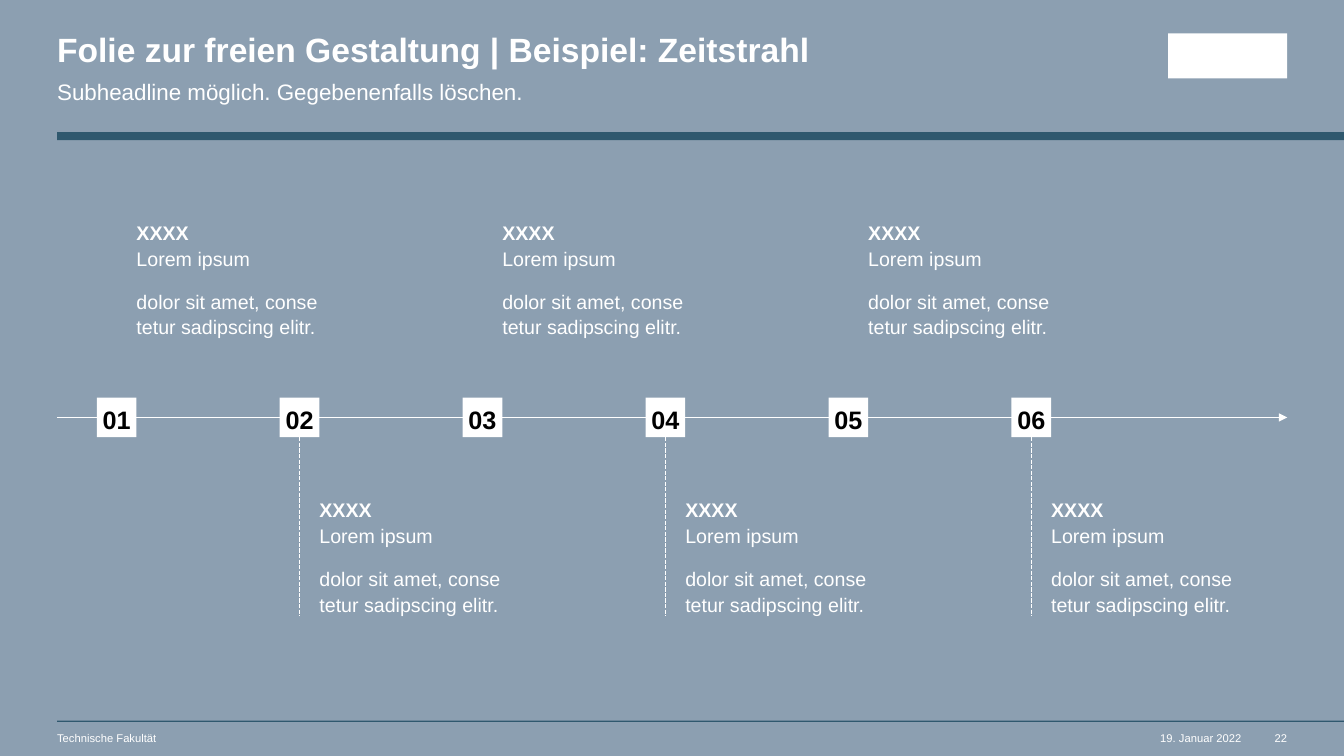
from dataclasses import dataclass

from lxml import etree
from pptx import Presentation
from pptx import util as u
from pptx.dml.color import RGBColor
from pptx.enum import dml, shapes, text
from pptx.oxml import ns

WHITE = RGBColor(0xFF, 0xFF, 0xFF)
BLACK = RGBColor(0x00, 0x00, 0x00)
PETROL = RGBColor(0x2F, 0x58, 0x6E)
GREY_BLUE = RGBColor(0x8C, 0x9F, 0xB1)
FONT = "Arial"

# Lengths in centimetres
PAGE_WIDTH, PAGE_HEIGHT = 33.87, 19.05
LEFT, RIGHT = 1.44, 32.44
AXIS_Y = 10.52
MARKER_SIZE = 1.0
FIRST_MARKER, MARKER_STEP = 2.44, 4.61
UPPER_TEXT, LOWER_TEXT = 5.51, 12.5
GUIDE_END = 15.52


@dataclass(frozen=True)
class Area:
    left: float
    top: float
    width: float
    height: float

    def lengths(self) -> list:
        return [u.Cm(side) for side in (self.left, self.top, self.width, self.height)]


@dataclass(frozen=True)
class Style:
    size: int
    color: RGBColor = WHITE
    bold: bool = False
    align: text.PP_ALIGN = text.PP_ALIGN.LEFT
    spacing: float = 1.0
    after: int = 0


@dataclass(frozen=True)
class Label:
    wording: str
    area: Area
    style: Style


@dataclass(frozen=True)
class Milestone:
    number: str
    left: float
    above: bool


TITLE = Label("Folie zur freien Gestaltung | Beispiel: Zeitstrahl",
              Area(LEFT, 0.84, 19.1, 0.91), Style(24, bold=True, spacing=0.9))
SUBHEADLINE = Label("Subheadline möglich. Gegebenenfalls löschen.",
                    Area(LEFT, 1.91, 19.03, 0.69), Style(16, spacing=1.1, after=12))
FOOTER = [
    Label("Technische Fakultät", Area(LEFT, 18.44, 15.19, 0.33), Style(8)),
    Label("19. Januar 2022", Area(28.93, 18.44, 2.36, 0.33),
          Style(8, align=text.PP_ALIGN.RIGHT)),
    Label("22", Area(31.9, 18.44, 0.54, 0.33), Style(8, align=text.PP_ALIGN.RIGHT)),
]
ENTRY = "XXXX\vLorem ipsum\ndolor sit amet, conse\vtetur sadipscing elitr."
ENTRY_STYLE = Style(14, spacing=1.1, after=12)
MARKER_STYLE = Style(18, BLACK, True, text.PP_ALIGN.CENTER, 1.1, 12)
MILESTONES = [
    Milestone(f"{index + 1:02}", FIRST_MARKER + index * MARKER_STEP, index % 2 == 0)
    for index in range(6)
]


def write(frame, wording: str, style: Style, anchor=text.MSO_ANCHOR.TOP) -> None:
    frame.text = wording
    frame.word_wrap = True
    frame.auto_size = text.MSO_AUTO_SIZE.NONE
    frame.vertical_anchor = anchor
    frame.margin_left = frame.margin_right = frame.margin_top = frame.margin_bottom = 0
    for para in frame.paragraphs:
        para.alignment = style.align
        para.line_spacing = style.spacing
        para.space_before, para.space_after = u.Pt(0), u.Pt(style.after)
        for span in para.runs:
            span.font.name, span.font.size = FONT, u.Pt(style.size)
            span.font.bold, span.font.color.rgb = style.bold, style.color


def fill_placeholder(holder, label: Label) -> None:
    holder.left, holder.top, holder.width, holder.height = label.area.lengths()
    write(holder.text_frame, label.wording, label.style)


def add_label(page, label: Label):
    box = page.shapes.add_textbox(*label.area.lengths())
    write(box.text_frame, label.wording, label.style)
    return box


def add_block(page, area: Area, color: RGBColor):
    block = page.shapes.add_shape(shapes.MSO_SHAPE.RECTANGLE, *area.lengths())
    block.shadow.inherit = False
    block.fill.solid()
    block.fill.fore_color.rgb = color
    block.line.fill.background()
    return block


def add_line(page, x1: float, y1: float, x2: float, y2: float):
    line = page.shapes.add_connector(
        shapes.MSO_CONNECTOR.STRAIGHT, u.Cm(x1), u.Cm(y1), u.Cm(x2), u.Cm(y2))
    line.line.color.rgb = WHITE
    line.line.width = u.Pt(1)
    etree.SubElement(line._element.spPr, ns.qn("a:effectLst"))
    return line


def add_milestone(page, milestone: Milestone) -> None:
    top = AXIS_Y - MARKER_SIZE / 2
    marker = add_block(page, Area(milestone.left, top, MARKER_SIZE, MARKER_SIZE), WHITE)
    write(marker.text_frame, milestone.number, MARKER_STYLE, text.MSO_ANCHOR.MIDDLE)

    entry_top = UPPER_TEXT if milestone.above else LOWER_TEXT
    area = Area(milestone.left + MARKER_SIZE, entry_top, 4.95, 3.0)
    entry = add_label(page, Label(ENTRY, area, ENTRY_STYLE))
    entry.text_frame.paragraphs[0].runs[0].font.bold = True

    if not milestone.above:
        center = milestone.left + MARKER_SIZE / 2
        guide = add_line(page, center, top + MARKER_SIZE, center, GUIDE_END)
        guide.line.dash_style = dml.MSO_LINE.SQUARE_DOT


def main() -> None:
    deck = Presentation()
    deck.slide_width, deck.slide_height = u.Cm(PAGE_WIDTH), u.Cm(PAGE_HEIGHT)
    page = deck.slides.add_slide(deck.slide_layouts[1])
    page.background.fill.solid()
    page.background.fill.fore_color.rgb = GREY_BLUE

    # Header: title, subheadline, bar and logo block
    fill_placeholder(page.shapes.title, TITLE)
    body = page.placeholders[1]
    fill_placeholder(body, SUBHEADLINE)
    properties = body.text_frame.paragraphs[0]._p.get_or_add_pPr()
    properties.set("marL", "0")
    properties.set("indent", "0")
    etree.SubElement(properties, ns.qn("a:buNone"))
    add_block(page, Area(LEFT, 3.33, PAGE_WIDTH - LEFT, 0.2), PETROL)
    add_block(page, Area(29.44, 0.84, 3.0, 1.14), WHITE)

    # Footer
    add_block(page, Area(LEFT, 18.16, PAGE_WIDTH - LEFT, 0.03), PETROL)
    for label in FOOTER:
        add_label(page, label)

    # Timeline
    axis = add_line(page, LEFT, AXIS_Y, RIGHT, AXIS_Y)
    etree.SubElement(axis.line._get_or_add_ln(), ns.qn("a:tailEnd"), type="triangle")
    for milestone in MILESTONES:
        add_milestone(page, milestone)

    deck.save("out.pptx")


if __name__ == "__main__":
    main()
